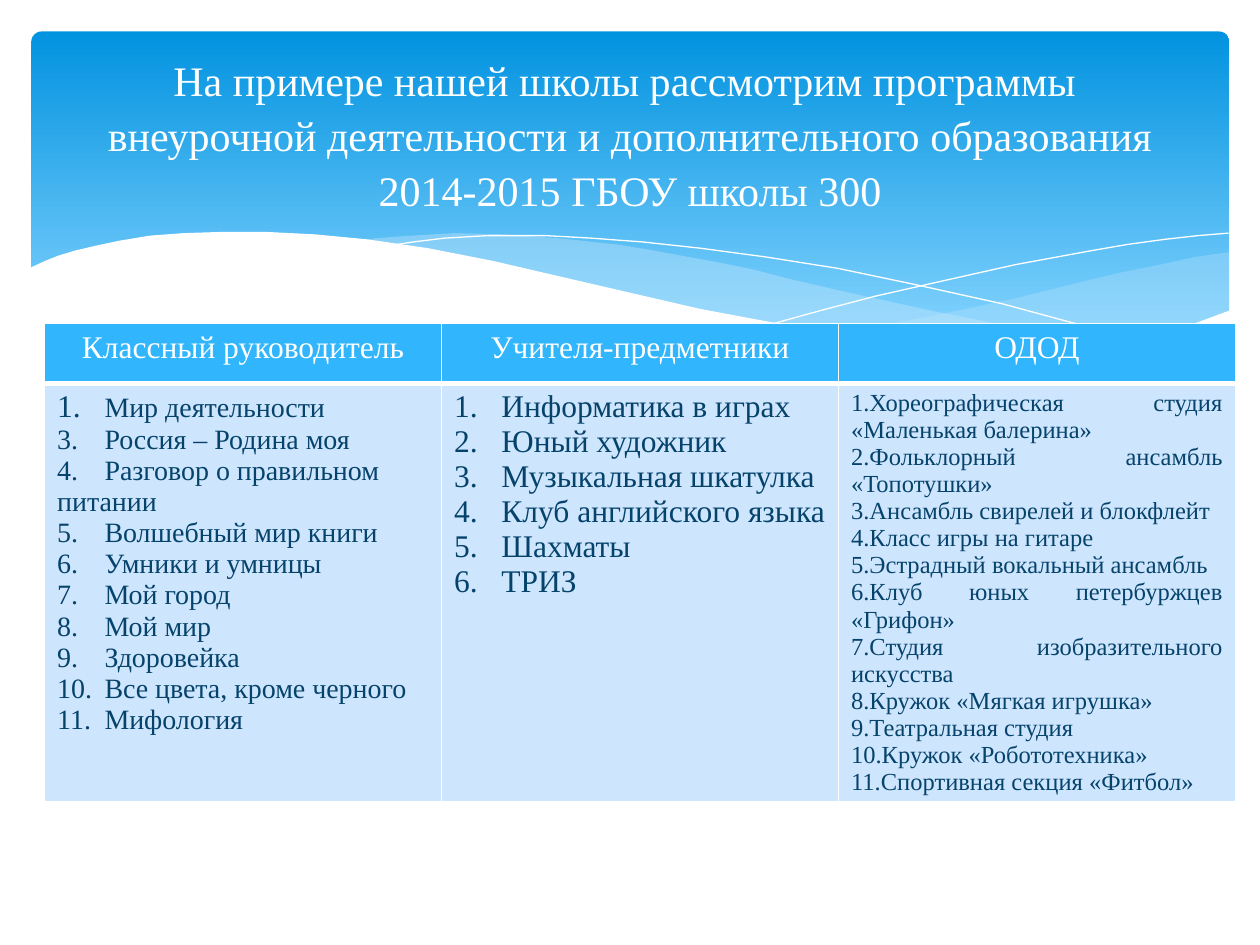
from lxml import etree
from pptx import Presentation
from pptx.dml.color import RGBColor
from pptx.enum.shapes import MSO_SHAPE
from pptx.enum.text import MSO_ANCHOR, PP_ALIGN
from pptx.oxml.ns import qn
from pptx.util import Pt

ROUNDED = MSO_SHAPE.ROUNDED_RECTANGLE
MIDDLE = MSO_ANCHOR.MIDDLE
LEFT, CENTER, JUSTIFY = PP_ALIGN.LEFT, PP_ALIGN.CENTER, PP_ALIGN.JUSTIFY
WHITE = RGBColor(0xFF, 0xFF, 0xFF)
DEEP_BLUE = RGBColor(0x02, 0x93, 0xE0)
SKY_BLUE = RGBColor(0x83, 0xD3, 0xFE)
PALE_BLUE = RGBColor(0xC6, 0xE7, 0xFC)
HEADER_BLUE = RGBColor(0x31, 0xB6, 0xFD)
BODY_BLUE = RGBColor(0xCE, 0xE5, 0xFE)
NAVY = RGBColor(0x06, 0x43, 0x6B)
FONT = "Times New Roman"
WAVE_UNIT = Pt(0.72)
NUMBER_INDENT = Pt(27)

RIGHT_SWELL = [
    (976, 200), (948, 204), (921, 210), (891, 216), (861, 223), (805, 237),
    (753, 248), (706, 257), (661, 265), (691, 269), (719, 271), (745, 275),
    (769, 277), (803, 278), (835, 277), (863, 275), (889, 272), (913, 267),
    (935, 262), (949, 257), (963, 252), (976, 247)]
MIDDLE_SWELL = [
    (893, 273), (866, 269), (807, 260), (741, 247), (668, 231), (629, 222),
    (598, 214), (569, 208), (541, 203), (514, 198), (489, 194), (442, 189),
    (399, 186), (361, 185), (328, 187), (299, 189), (286, 191), (323, 196),
    (362, 203), (404, 211), (449, 222), (491, 232), (530, 240), (584, 252),
    (634, 261), (680, 268), (722, 274), (761, 277), (796, 278), (838, 278),
    (867, 276), (893, 273)]
FALLING_LINE = [
    (309, 195), (328, 192), (353, 189), (387, 187), (433, 187), (469, 189),
    (510, 192), (556, 197), (608, 204), (665, 213), (727, 226), (795, 241),
    (869, 261), (907, 272)]
RISING_LINE = [
    (613, 257), (653, 246), (695, 235), (748, 223), (806, 210), (866, 199),
    (895, 194), (924, 190), (951, 187), (975, 185)]
WHITE_WAVE = [
    (977, 246), (950, 256), (920, 265), (887, 271), (850, 275), (809, 277),
    (761, 275), (708, 270), (648, 262), (603, 254), (555, 245), (503, 233),
    (447, 220), (391, 207), (340, 197), (292, 190), (250, 186), (211, 184),
    (177, 184), (146, 185), (119, 187), (95, 191), (76, 195), (59, 199),
    (46, 203), (36, 207), (23, 213), (23, 329), (977, 329)]
WAVES = [
    (RIGHT_SWELL, PALE_BLUE, 29), (MIDDLE_SWELL, PALE_BLUE, 40),
    (FALLING_LINE, None, 100), (RISING_LINE, None, 100), (WHITE_WAVE, WHITE, 100)]

HEADERS = ["Классный руководитель", "Учителя-предметники", "ОДОД"]
TEACHER_TYPED = [
    "1.\tМир деятельности", "3.\tРоссия – Родина моя",
    "4.\tРазговор о правильном питании", "5.\tВолшебный мир книги",
    "6.\tУмники и умницы"]
TEACHER_NUMBERED = [
    "Мой город", "Мой мир", "Здоровейка", "Все цвета, кроме черного", "Мифология"]
SUBJECT_NUMBERED = [
    "Информатика в играх", "Юный художник", "Музыкальная шкатулка",
    "Клуб английского языка", "Шахматы", "ТРИЗ"]
CLUBS = [
    "1.Хореографическая студия «Маленькая балерина»",
    "2.Фольклорный ансамбль «Топотушки»", "3.Ансамбль свирелей и блокфлейт",
    "4.Класс игры на гитаре", "5.Эстрадный вокальный ансамбль",
    "6.Клуб юных петербуржцев «Грифон»", "7.Студия изобразительного искусства",
    "8.Кружок «Мягкая игрушка»", "9.Театральная студия",
    "10.Кружок «Робототехника»", "11.Спортивная секция «Фитбол»"]
COLUMNS = [
    (TEACHER_TYPED, TEACHER_NUMBERED, 7, 16, LEFT),
    ([], SUBJECT_NUMBERED, 1, 18, LEFT),
    (CLUBS, [], 1, 14, JUSTIFY)]


def fill_text(frame, lines, size, color, align):
    frame.text = "\n".join(lines)
    for para in frame.paragraphs:
        para.alignment = align
        for span in para.runs:
            span.font.name = FONT
            span.font.size = Pt(size)
            span.font.bold = False
            span.font.color.rgb = color


def style_cell(cell, color, top, bottom):
    properties = cell._tc.get_or_add_tcPr()
    for side, width in (("L", 1), ("R", 1), ("T", top), ("B", bottom)):
        border = etree.SubElement(properties, qn(f"a:ln{side}"), w=str(Pt(width)))
        solid = etree.SubElement(border, qn("a:solidFill"))
        etree.SubElement(solid, qn("a:srgbClr"), val=str(WHITE))
    cell.fill.solid()
    cell.fill.fore_color.rgb = color


deck = Presentation()
deck.slide_width, deck.slide_height = Pt(720), Pt(540)
page = deck.slides.add_slide(deck.slide_layouts[6])

banner = page.shapes.add_shape(ROUNDED, Pt(18), Pt(18), Pt(684.5), Pt(194.5))
banner.adjustments[0] = 0.03
banner.shadow.inherit = False
banner.line.fill.background()
banner.fill.gradient()
banner.fill.gradient_angle = 270
for stop, color, position in zip(
        banner.fill.gradient_stops, (DEEP_BLUE, SKY_BLUE), (0, 0.9)):
    stop.color.rgb = color
    stop.position = position

for points, color, opacity in WAVES:
    builder = page.shapes.build_freeform(*points[0], scale=WAVE_UNIT)
    builder.add_line_segments(points[1:], close=color is not None)
    wave = builder.convert_to_shape()
    wave.shadow.inherit = False
    if color is None:
        wave.fill.background()
        wave.line.color.rgb = WHITE
        wave.line.width = Pt(0)
    else:
        wave.line.fill.background()
        wave.fill.solid()
        wave.fill.fore_color.rgb = color
        if opacity < 100:
            tint = wave.fill._xPr.find(qn("a:solidFill"))[0]
            etree.SubElement(tint, qn("a:alpha"), val=str(opacity * 1000))

table = page.shapes.add_table(2, 3, Pt(25.5), Pt(185), Pt(680.4), Pt(272)).table
table.rows[0].height, table.rows[1].height = Pt(34), Pt(238)
for index, (typed, numbered, start, size, align) in enumerate(COLUMNS):
    header, body = table.cell(0, index), table.cell(1, index)
    style_cell(header, HEADER_BLUE, 1, 3)
    fill_text(header.text_frame, [HEADERS[index]], 18, WHITE, CENTER)
    style_cell(body, BODY_BLUE, 3, 1)
    fill_text(body.text_frame, typed + numbered, size, NAVY, align)
    for number, para in enumerate(body.text_frame.paragraphs):
        properties = para._p.get_or_add_pPr()
        if number >= len(typed):
            properties.set("marL", str(NUMBER_INDENT))
            properties.set("indent", str(-NUMBER_INDENT))
            etree.SubElement(properties, qn("a:buFont"), typeface="+mj-lt")
            etree.SubElement(properties, qn("a:buAutoNum"),
                             type="arabicPeriod", startAt=str(start))
        elif "\t" in para.text:
            stops = etree.SubElement(properties, qn("a:tabLst"))
            etree.SubElement(stops, qn("a:tab"), pos=str(NUMBER_INDENT), algn="l")

first = table.cell(1, 0).text_frame.paragraphs[0]
number_span = first.runs[0]
name_span = first.add_run()
number_span.text, name_span.text = "1.\t", "Мир деятельности"
name_span.font.name = FONT
name_span.font.color.rgb = NAVY
name_span.font.size = Pt(16)
number_span.font.size = Pt(18)

title = page.shapes.add_textbox(Pt(36), Pt(26.5), Pt(648), Pt(98.5))
title.text_frame.word_wrap = True
title.text_frame.vertical_anchor = MIDDLE
fill_text(title.text_frame, [
    "На примере нашей школы рассмотрим программы \v"
    "внеурочной деятельности и дополнительного образования\v"
    "2014-2015 ГБОУ школы 300"], 24, WHITE, CENTER)
title.text_frame.paragraphs[0].line_spacing = 1.09

deck.save("out.pptx")
